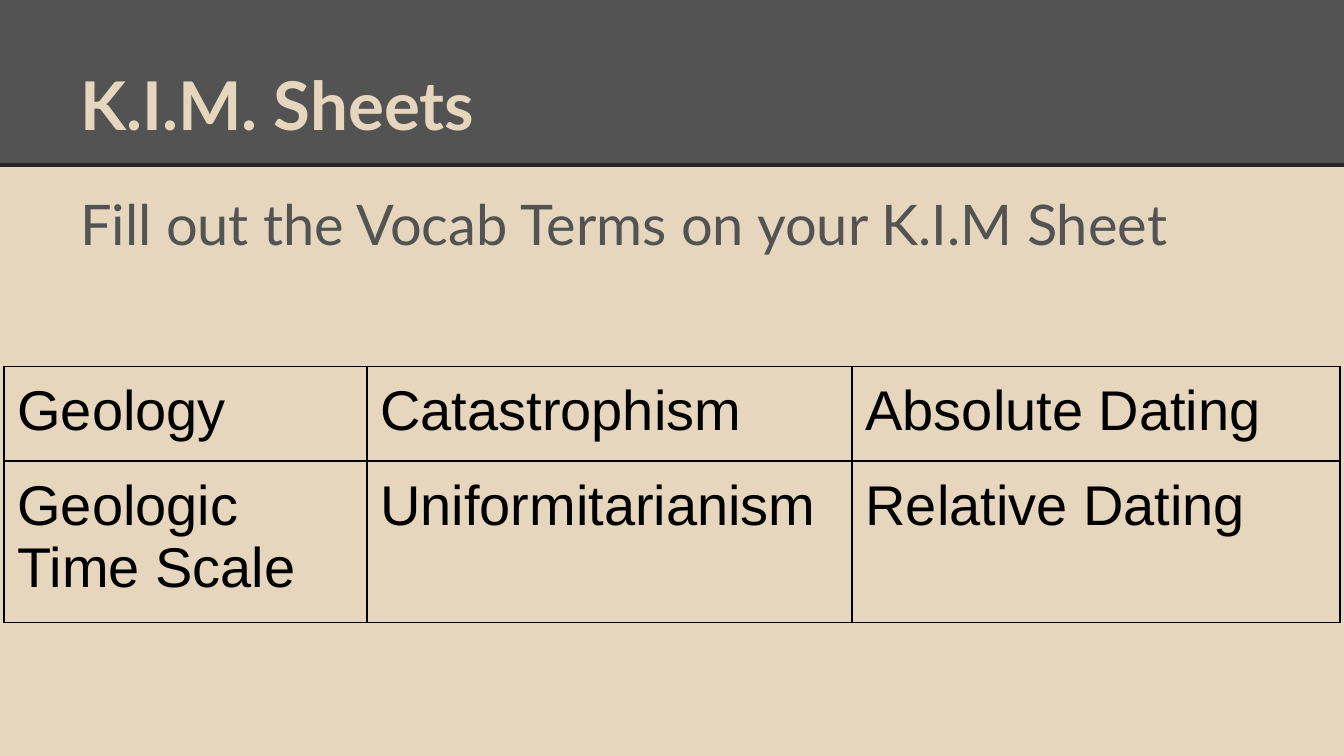
"""Build the K.I.M. Sheets vocabulary slide."""

from dataclasses import dataclass

from lxml import etree
from pptx import Presentation
from pptx.dml.color import RGBColor
from pptx.enum.shapes import MSO_CONNECTOR, MSO_SHAPE
from pptx.enum.text import MSO_ANCHOR
from pptx.oxml.ns import qn
from pptx.slide import Slide
from pptx.table import _Cell
from pptx.text.text import TextFrame
from pptx.util import Inches, Pt

STRAIGHT = MSO_CONNECTOR.STRAIGHT
RECTANGLE = MSO_SHAPE.RECTANGLE
TOP = MSO_ANCHOR.TOP
BOTTOM = MSO_ANCHOR.BOTTOM

SAND = RGBColor(0xE6, 0xD6, 0xBD)
GRAY = RGBColor(0x53, 0x53, 0x53)
CHARCOAL = RGBColor(0x26, 0x26, 0x26)
BLACK = RGBColor(0, 0, 0)

SLIDE_WIDTH = 10
SLIDE_HEIGHT = SLIDE_WIDTH * 9 / 16
HEADER_HEIGHT = 1.23
INSET = Inches(0.1)
COLUMN_WIDTHS = (2.7, 3.61, 3.63)
ROW_HEIGHT = 0.42
TABLE_HEIGHT = 1.9
BORDER_SIDES = ("a:lnL", "a:lnR", "a:lnT", "a:lnB")


@dataclass(frozen=True)
class TermRow:
    """One table row of vocabulary terms."""

    terms: tuple[str, ...]


TERM_ROWS = (
    TermRow(("Geology", "Catastrophism", "Absolute Dating")),
    TermRow(("Geologic Time Scale", "Uniformitarianism", "Relative Dating")),
)


def write_text(frame: TextFrame, text: str, *, font: str, size: float,
               color: RGBColor, bold: bool = False) -> None:
    """Put one formatted run of text into a frame."""
    run = frame.paragraphs[0].add_run()
    run.text = text
    run.font.name = font
    run.font.size = Pt(size)
    run.font.bold = bold
    run.font.color.rgb = color


def add_text_box(slide: Slide, top: float, height: float,
                 anchor: MSO_ANCHOR) -> TextFrame:
    """Add a wrapping text box inside the slide margins."""
    shape = slide.shapes.add_textbox(
        Inches(0.5), Inches(top), Inches(9), Inches(height))
    frame = shape.text_frame
    frame.word_wrap = True
    frame.vertical_anchor = anchor
    frame.margin_left = frame.margin_right = INSET
    frame.margin_top = frame.margin_bottom = INSET
    return frame


def add_header(slide: Slide) -> None:
    """Draw the header band and the rule below it."""
    band = slide.shapes.add_shape(
        RECTANGLE, 0, 0, Inches(SLIDE_WIDTH), Inches(HEADER_HEIGHT))
    band.shadow.inherit = False
    band.fill.solid()
    band.fill.fore_color.rgb = GRAY
    band.line.fill.background()
    rule = slide.shapes.add_connector(
        STRAIGHT, 0, Inches(HEADER_HEIGHT),
        Inches(SLIDE_WIDTH), Inches(HEADER_HEIGHT))
    rule.line.color.rgb = CHARCOAL
    rule.line.width = Pt(2.25)
    etree.SubElement(rule._element.spPr, qn("a:effectLst"))


def format_cell(cell: _Cell) -> None:
    """Give a cell thin black borders, even margins and no fill."""
    cell.margin_left = cell.margin_right = INSET
    cell.margin_top = cell.margin_bottom = INSET
    properties = cell._tc.get_or_add_tcPr()
    for side in BORDER_SIDES:
        border = etree.SubElement(properties, qn(side), w=str(Pt(0.75)))
        fill = etree.SubElement(border, qn("a:solidFill"))
        etree.SubElement(fill, qn("a:srgbClr"), val=str(BLACK))
    cell.fill.background()


def add_term_table(slide: Slide) -> None:
    """Add the table of vocabulary terms."""
    shape = slide.shapes.add_table(
        len(TERM_ROWS), len(COLUMN_WIDTHS), Inches(0.03), Inches(2.73),
        Inches(sum(COLUMN_WIDTHS)), Inches(TABLE_HEIGHT))
    table = shape.table
    table.first_row = False
    table.horz_banding = False
    for column, width in zip(table.columns, COLUMN_WIDTHS):
        column.width = Inches(width)
    for row, term_row in zip(table.rows, TERM_ROWS):
        row.height = Inches(ROW_HEIGHT)
        for cell, term in zip(row.cells, term_row.terms):
            format_cell(cell)
            write_text(cell.text_frame, term, font="Arial", size=30, color=BLACK)
    shape.height = Inches(TABLE_HEIGHT)


def main() -> None:
    """Create and save the presentation."""
    presentation = Presentation()
    presentation.slide_width = Inches(SLIDE_WIDTH)
    presentation.slide_height = Inches(SLIDE_HEIGHT)
    slide = presentation.slides.add_slide(presentation.slide_layouts[6])
    slide.background.fill.solid()
    slide.background.fill.fore_color.rgb = SAND

    add_header(slide)
    title = add_text_box(slide, 0.23, 0.94, BOTTOM)
    write_text(title, "K.I.M. Sheets", font="Lato", size=36, color=SAND, bold=True)
    instruction = add_text_box(slide, 1.31, 4.07, TOP)
    write_text(instruction, "Fill out the Vocab Terms on your K.I.M Sheet",
               font="Lato", size=30, color=GRAY)
    add_term_table(slide)
    presentation.save("out.pptx")


if __name__ == "__main__":
    main()
